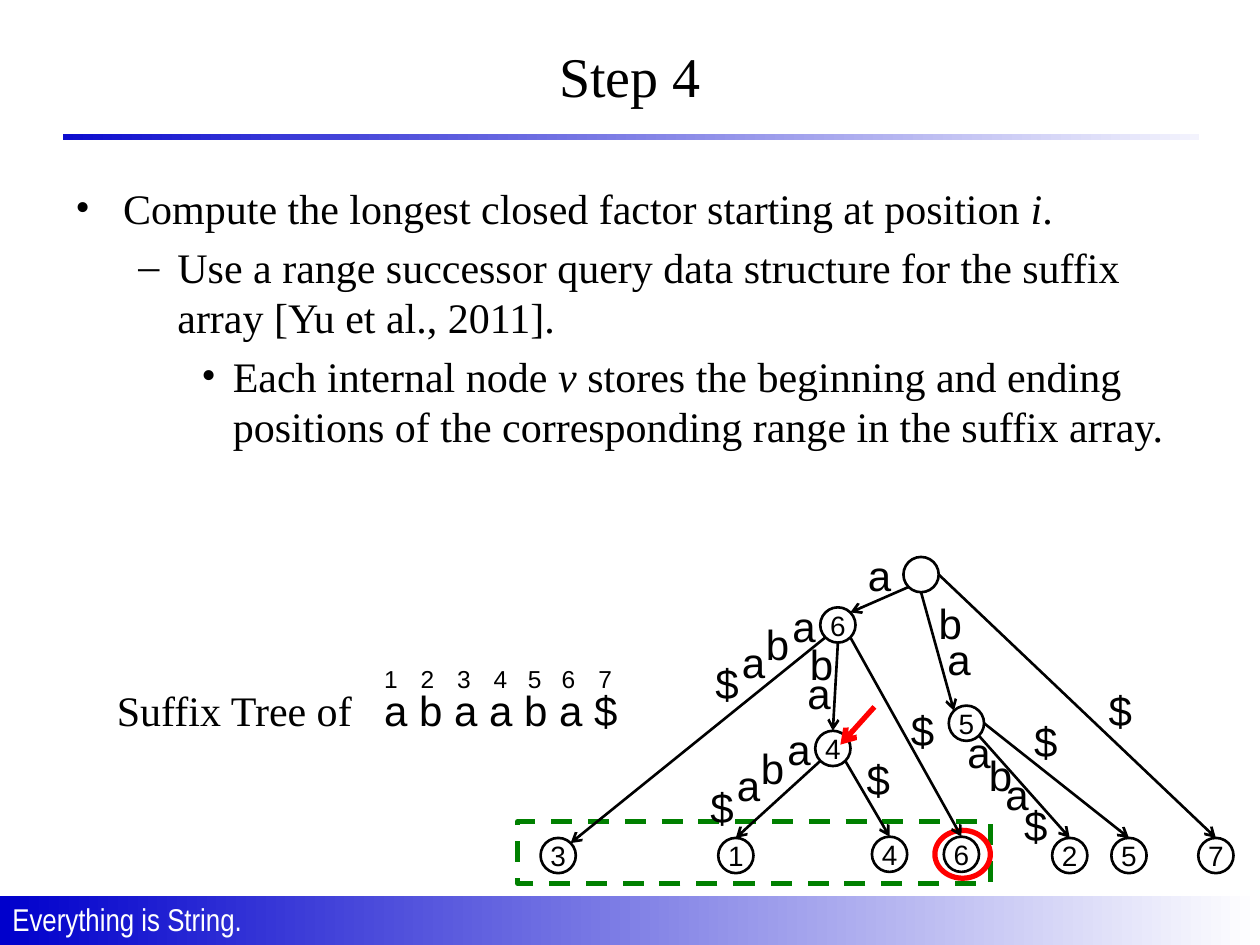
from math import cos, radians, sin

from lxml.etree import SubElement
from pptx import Presentation
from pptx.dml.color import RGBColor
from pptx.enum.dml import MSO_LINE
from pptx.enum.shapes import MSO_CONNECTOR, MSO_SHAPE
from pptx.enum.text import MSO_ANCHOR, PP_ALIGN
from pptx.oxml.ns import qn
from pptx.util import Inches, Pt

C = {"blue": "0000CC", "white": "FFFFFF", "black": "000000", "green": "008000",
     "red": "FF0000", "bar_start": "0D0DCE", "bar_end": "F3F3FD"}
SERIF, SANS = "Times New Roman", "Arial"

prs = Presentation()
prs.slide_width, prs.slide_height = Inches(10), Inches(7.5)
COL = prs.slide_width / 100
ROW = prs.slide_height / 75
s = prs.slides.add_slide(prs.slide_layouts[5])


def grid(x, y, w, h):
    return int(x * COL), int(y * ROW), int(w * COL), int(h * ROW)


def write(text, p=None, at=None, size=24, font=SANS, color="black", italic=False):
    if p is None:
        tf = s.shapes.add_textbox(*grid(*at)).text_frame
        tf.word_wrap = False
        p = tf.paragraphs[0]
    r = p.add_run()
    r.text = text
    r.font.size, r.font.name, r.font.italic = Pt(size), font, italic
    r.font.color.rgb = RGBColor.from_string(C[color])


for at, start, end in [((0, 71.1, 100, 3.9), "blue", "white"),
                       ((5, 10.6, 90.2, 0.5), "bar_start", "bar_end")]:
    sp = s.shapes.add_shape(MSO_SHAPE.RECTANGLE, *grid(*at))
    sp.shadow.inherit = False
    sp.line.fill.background()
    sp.fill.gradient()
    sp.fill.gradient_angle = 0
    for stop, color in zip(sp.fill.gradient_stops, (start, end)):
        stop.color.rgb = RGBColor.from_string(C[color])
write("Everything is String.", at=(0, 70.9, 22.2, 4), size=18, font="Arial Narrow", color="white")

title = s.shapes.title
title.left, title.top, title.width, title.height = grid(5, 1.3, 90, 9.3)
title.text_frame.vertical_anchor = MSO_ANCHOR.MIDDLE
p = title.text_frame.paragraphs[0]
p.alignment = PP_ALIGN.CENTER
write("Step 4", p=p, size=32, font=SERIF)

body = [
    ("•", 3.8, -3.8, ["Compute the longest closed factor starting at position ", "i", "."]),
    ("–", 8.1, -3.1, ["Use a range successor query data structure for the suffix array [Yu et al., 2011]."]),
    ("•", 12.5, -2.5, ["Each internal node ", "v",
                       " stores the beginning and ending positions of the corresponding range in the suffix array."]),
]
tf = s.shapes.add_textbox(*grid(5, 14, 90, 25)).text_frame
tf.word_wrap = True
for level, (bullet, margin, indent, runs) in enumerate(body):
    p = tf.add_paragraph() if level else tf.paragraphs[0]
    p.level = level
    p.space_before = Pt(4.8)
    pPr = p._p.get_or_add_pPr()
    pPr.set("marL", str(int(margin * COL)))
    pPr.set("indent", str(int(indent * COL)))
    SubElement(pPr, qn("a:buFont"), typeface=SERIF)
    SubElement(pPr, qn("a:buChar"), char=bullet)
    for i, text in enumerate(runs):
        write(text, p=p, font=SERIF, italic=i == 1)

R = 1.4
centers = {
    "root": (73.1, 45.6, ""), "v6": (66.5, 49.6, "6"), "v5": (76.7, 57.4, "5"), "v4": (66.1, 59.4, "4"),
    "leaf3": (44.3, 67.9, "3"), "leaf1": (58.4, 67.9, "1"), "leaf4": (70.6, 67.8, "4"),
    "leaf6": (76.3, 67.8, "6"), "leaf2": (84.9, 67.9, "2"), "leaf5": (89.6, 67.9, "5"),
    "leaf7": (96.5, 67.9, "7"),
}
outlines = [(name, MSO_SHAPE.OVAL, (x - R, y - R, 2 * R, 2 * R), "black", 1.5, label)
            for name, (x, y, label) in centers.items()]
outlines += [("range", MSO_SHAPE.RECTANGLE, (41.1, 65.2, 37.5, 4.9), "green", 3, ""),
             ("ring", MSO_SHAPE.OVAL, (74.2, 65.9, 4.4, 3.8), "red", 3, "")]
shapes = {}
for name, kind, at, color, width, label in outlines:
    sp = shapes[name] = s.shapes.add_shape(kind, *grid(*at))
    sp.shadow.inherit = False
    sp.fill.background()
    sp.line.color.rgb = RGBColor.from_string(C[color])
    sp.line.width = Pt(width)
    if label:
        tf = sp.text_frame
        tf.margin_left = tf.margin_right = tf.margin_top = tf.margin_bottom = 0
        tf.vertical_anchor = MSO_ANCHOR.MIDDLE
        tf.word_wrap = False
        p = tf.paragraphs[0]
        p.alignment = PP_ALIGN.CENTER
        write(label, p=p, size=16)
shapes["range"].line.dash_style = MSO_LINE.DASH

TOP, RIGHT, BOTTOM = -90, 0, 90
edges = [
    ("root", 135, "v6", -45), ("root", BOTTOM, "v5", -135), ("root", RIGHT, "leaf7", TOP),
    ("v6", 135, "leaf3", -45), ("v6", BOTTOM, "v4", TOP), ("v6", 45, "leaf6", TOP),
    ("v4", 135, "leaf1", TOP), ("v4", 45, "leaf4", TOP),
    ("v5", 45, "leaf2", TOP), ("v5", RIGHT, "leaf5", TOP),
]
arrows = [(69.4, 56.1, 66.7, 59.1, "red", 3, None)]
for parent, out, child, into in edges:
    ends = []
    for node, angle in ((parent, out), (child, into)):
        x, y, label = centers[node]
        ends += [x + R * cos(radians(angle)), y + R * sin(radians(angle))]
    arrows.append((*ends, "black", 1.5, child if into == TOP else None))
for x1, y1, x2, y2, color, width, target in arrows:
    c = s.shapes.add_connector(MSO_CONNECTOR.STRAIGHT, *grid(x1, y1, x2, y2))
    if target:
        c.end_connect(shapes[target], 0)
    c.line.color.rgb = RGBColor.from_string(C[color])
    c.line.width = Pt(width)
    spPr = c.element.spPr
    SubElement(spPr.get_or_add_ln(), qn("a:tailEnd"), type="arrow")
    SubElement(spPr, qn("a:effectLst"))

edge_labels = [
    ("a", [(67.9, 43.1)]),
    ("ba", [(73.5, 46.9), (74.2, 49.8)]),
    ("$", [(87, 53.8)]),
    ("aba$", [(61.9, 47.2), (59.8, 48.6), (57.9, 50), (55.8, 51.7)]),
    ("ba", [(63.3, 50.2), (63.1, 52.5)]),
    ("$", [(71.3, 55.4)]),
    ("aba$", [(61.5, 56.9), (59.4, 58.4), (57.5, 59.8), (55.4, 61.5)]),
    ("$", [(67.8, 59.3)]),
    ("aba$", [(75.8, 57.2), (77.5, 59), (78.8, 60.5), (80.3, 63)]),
    ("$", [(81.1, 56.3)]),
]
for label, places in edge_labels:
    for letter, (x, y) in zip(label, places):
        write(letter, at=(x, y, 3.9, 5))

write("Suffix Tree of", at=(8.3, 53.8, 20.7, 5), font=SERIF)
write("a b a a b a $", at=(29.5, 53.8, 20.5, 5))
for i, x in enumerate([29.5, 32.4, 35.3, 38.2, 40.9, 43.6, 46.5], 1):
    write(str(i), at=(x, 52.2, 3.1, 3.4), size=14)

prs.save("out.pptx")
